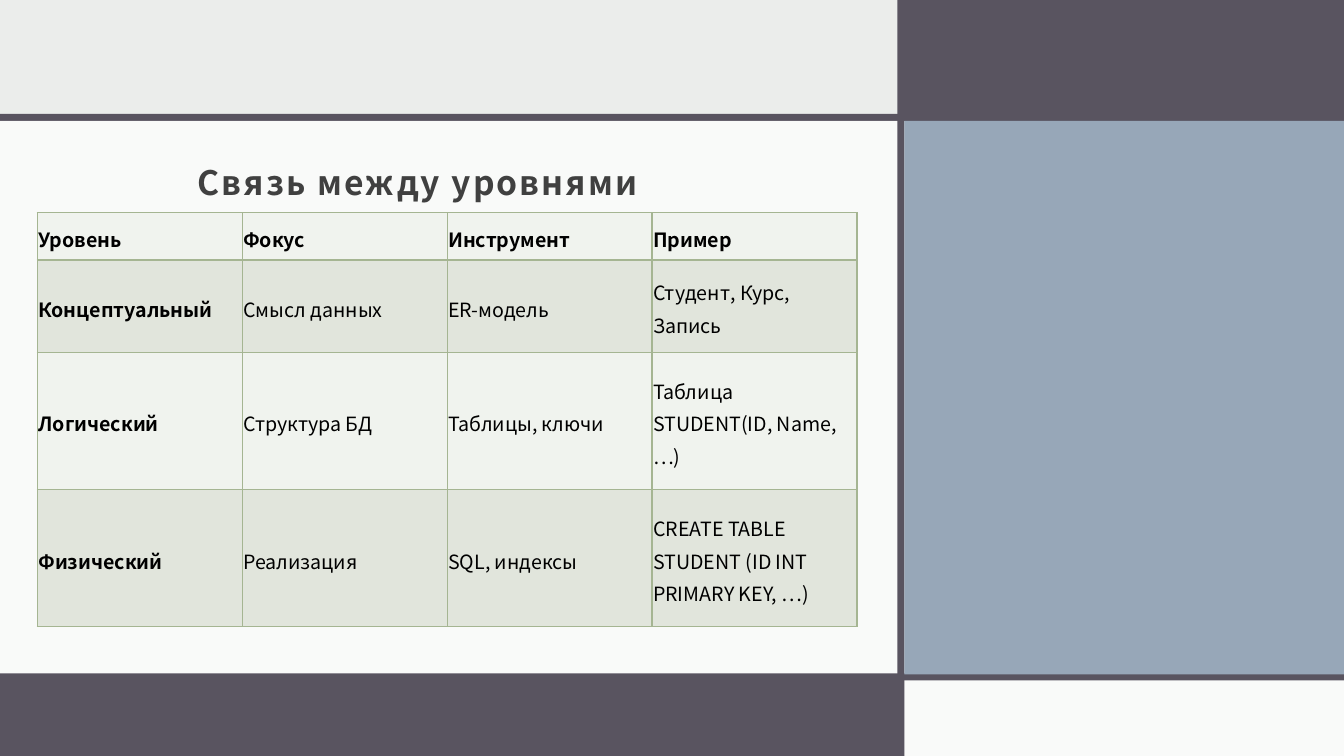
from lxml import etree
from pptx import Presentation
from pptx.dml.color import RGBColor
from pptx.enum.shapes import MSO_SHAPE
from pptx.enum.text import MSO_ANCHOR, PP_ALIGN
from pptx.oxml.ns import qn
from pptx.util import Inches, Pt

RECTANGLE = MSO_SHAPE.RECTANGLE
BOTTOM, MIDDLE = MSO_ANCHOR.BOTTOM, MSO_ANCHOR.MIDDLE
LEFT, CENTER = PP_ALIGN.LEFT, PP_ALIGN.CENTER

FONT = "Noto Sans CJK JP"
BACKGROUND, FRAME, WHITE, BLUE = "EBEDEB", "595460", "FFFFFF", "97A7B8"
TITLE_COLOR, TEXT_COLOR, BORDER = "404040", "000000", "A5B592"
ROW_FILLS = ("F0F3EE", "E1E5DC")

# left, top, width, height, colour, opacity in percent
PANELS = [
    (8.94, 0, 4.39, 1.16, FRAME, 100),
    (0, 1.13, 13.33, 0.07, FRAME, 100),
    (0, 1.2, 8.96, 5.49, WHITE, 75),
    (0, 6.72, 8.91, 0.78, FRAME, 100),
    (8.97, 6.74, 4.36, 0.76, WHITE, 75),
    (0, 6.68, 13.33, 0.07, FRAME, 100),
    (8.9, 0, 0.07, 7.5, FRAME, 100),
    (8.97, 1.2, 4.36, 5.49, BLUE, 100),
]

ROW_HEIGHTS = (0.47, 0.92, 1.36, 1.36)
LEVELS = [
    ("Уровень", "Фокус", "Инструмент", "Пример"),
    ("Концептуальный", "Смысл данных", "ER-модель", "Студент, Курс, Запись"),
    ("Логический", "Структура БД", "Таблицы, ключи", "Таблица STUDENT(ID, Name, …)"),
    ("Физический", "Реализация", "SQL, индексы",
     "CREATE TABLE STUDENT (ID INT PRIMARY KEY, …)"),
]


def color(value):
    return RGBColor.from_string(value)


def set_values(target, values):
    for name, value in values.items():
        setattr(target, name, value)


def paint(target, value):
    target.fill.solid()
    target.fill.fore_color.rgb = color(value)


def write(paragraph, text, paragraph_format, font_format, font_color):
    set_values(paragraph, paragraph_format)
    run = paragraph.add_run()
    run.text = text
    set_values(run.font, {"name": FONT, **font_format})
    run.font.color.rgb = color(font_color)
    return run


def add_panel(slide, left, top, width, height, fill, opacity):
    shape = slide.shapes.add_shape(
        RECTANGLE, Inches(left), Inches(top), Inches(width), Inches(height))
    shape.shadow.inherit = False
    shape.line.fill.background()
    paint(shape, fill)
    if opacity < 100:
        fill_color = shape.fill._xPr.find(".//" + qn("a:srgbClr"))
        etree.SubElement(fill_color, qn("a:alpha"), val=str(opacity * 1000))


def add_title(slide, text):
    box = slide.shapes.add_textbox(
        Inches(0.19), Inches(1.49), Inches(7.91), Inches(0.62))
    frame = box.text_frame
    set_values(frame, {
        "word_wrap": True, "vertical_anchor": BOTTOM,
        "margin_left": Inches(0.12), "margin_right": Inches(0.12),
        "margin_top": Inches(0.12), "margin_bottom": Inches(0.1),
    })
    run = write(frame.paragraphs[0], text, {"alignment": CENTER},
                {"size": Pt(24), "bold": True}, TITLE_COLOR)
    run.font._element.set("spc", "150")  # letter spacing of 1.5 pt


def add_borders(cell):
    properties = cell._tc.get_or_add_tcPr()
    for position, side in enumerate(("lnL", "lnR", "lnT", "lnB")):
        line = etree.Element(qn("a:" + side), w=str(Pt(1)))
        fill = etree.SubElement(line, qn("a:solidFill"))
        etree.SubElement(fill, qn("a:srgbClr"), val=BORDER)
        properties.insert(position, line)


def fill_cell(cell, text, fill, bold):
    margin = Inches(0.01)
    set_values(cell, {
        "vertical_anchor": MIDDLE, "margin_left": margin,
        "margin_right": margin, "margin_top": margin, "margin_bottom": margin,
    })
    paint(cell, fill)
    add_borders(cell)
    write(cell.text_frame.paragraphs[0], text,
          {"alignment": LEFT, "line_spacing": 1.15, "space_after": Pt(8)},
          {"size": Pt(14), "bold": bold}, TEXT_COLOR)


def add_levels_table(slide):
    table = slide.shapes.add_table(
        len(LEVELS), len(LEVELS[0]), Inches(0.37), Inches(2.11),
        Inches(8.13), Inches(sum(ROW_HEIGHTS))).table
    set_values(table, {"first_row": False, "horz_banding": False})
    for row_index, texts in enumerate(LEVELS):
        table.rows[row_index].height = Inches(ROW_HEIGHTS[row_index])
        for column_index, text in enumerate(texts):
            fill_cell(table.cell(row_index, column_index), text,
                      ROW_FILLS[row_index % 2],
                      row_index == 0 or column_index == 0)


def main():
    presentation = Presentation()
    set_values(presentation, {
        "slide_width": Inches(13.33), "slide_height": Inches(7.5)})
    slide = presentation.slides.add_slide(presentation.slide_layouts[6])
    paint(slide.background, BACKGROUND)

    # Frame bars and panels
    for panel in PANELS:
        add_panel(slide, *panel)

    # Title and table
    add_title(slide, "Связь между уровнями")
    add_levels_table(slide)

    presentation.save("out.pptx")


if __name__ == "__main__":
    main()
